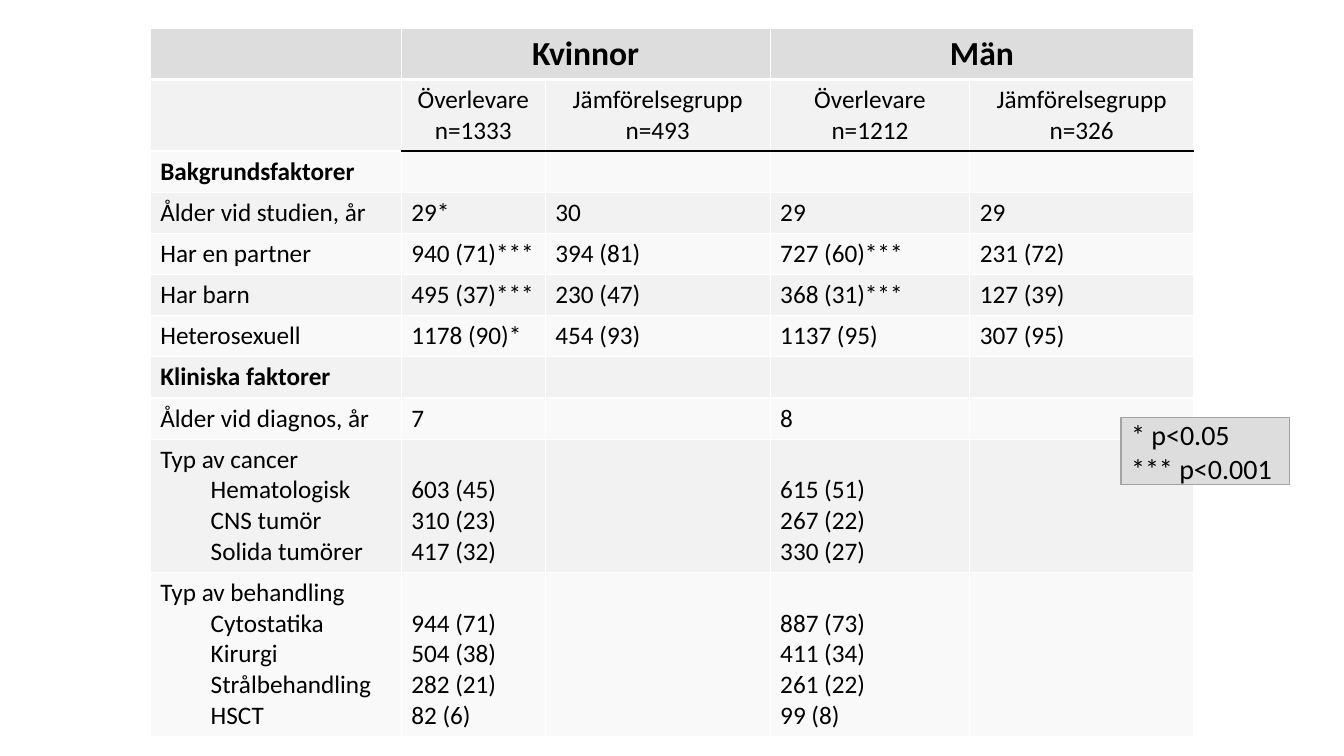
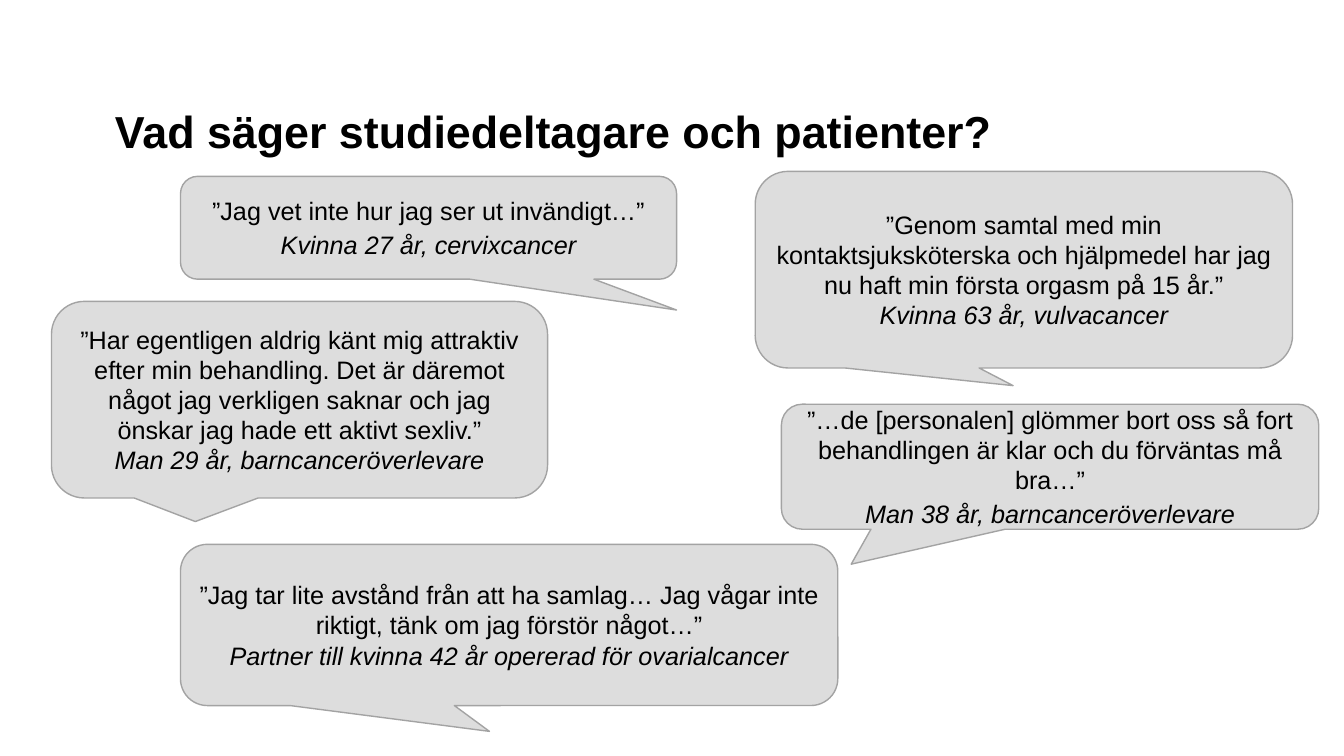
from lxml import etree
from pptx import Presentation
from pptx.dml.color import RGBColor
from pptx.enum.shapes import MSO_SHAPE
from pptx.enum.text import MSO_ANCHOR, MSO_AUTO_SIZE, PP_ALIGN
from pptx.oxml.ns import qn
from pptx.util import Inches, Pt

LEFT, CENTER = PP_ALIGN.LEFT, PP_ALIGN.CENTER
TOP, MIDDLE, BOTTOM = MSO_ANCHOR.TOP, MSO_ANCHOR.MIDDLE, MSO_ANCHOR.BOTTOM
RECTANGLE = MSO_SHAPE.RECTANGLE
CALLOUT = MSO_SHAPE.ROUNDED_RECTANGULAR_CALLOUT
FIXED_SIZE = MSO_AUTO_SIZE.NONE

SLIDE_WIDTH, SLIDE_HEIGHT = Inches(13.33), Inches(7.5)
SLIDE_BOX = (0, 0, SLIDE_WIDTH, SLIDE_HEIGHT)
TITLE_ONLY, BLANK = 5, 6
TABLE_FONT, SPEECH_FONT = "Calibri", "Arial"
COLORS = {
    "text": "000000",
    "panel": "DDDDDD",
    "outline": "A3A3A3",
    "band_dark": "F2F2F2",
    "band_light": "F9F9F9",
    "grid": "FFFFFF",
}

COLUMN_SHARES = (2.49, 1.43, 2.23, 1.98, 2.22)
ROW_SHARES = (0.51, 0.71) + (0.41,) * 7 + (1.32, 1.62)
SECTIONS = ("Bakgrundsfaktorer", "Kliniska faktorer")
ROWS = (
    ("", "Kvinnor", "", "Män", ""),
    ("", "Överlevare\nn=1333", "Jämförelsegrupp\nn=493",
     "Överlevare\nn=1212", "Jämförelsegrupp\nn=326"),
    ("Bakgrundsfaktorer", "", "", "", ""),
    ("Ålder vid studien, år", "29*", "30", "29", "29"),
    ("Har en partner", "940 (71)***", "394 (81)", "727 (60)***", "231 (72)"),
    ("Har barn", "495 (37)***", "230 (47)", "368 (31)***", "127 (39)"),
    ("Heterosexuell", "1178 (90)*", "454 (93)", "1137 (95)", "307 (95)"),
    ("Kliniska faktorer", "", "", "", ""),
    ("Ålder vid diagnos, år", "7", "", "8", ""),
    ("Typ av cancer\nHematologisk\nCNS tumör\nSolida tumörer",
     "603 (45)\n310 (23)\n417 (32)", "", "615 (51)\n267 (22)\n330 (27)", ""),
    ("Typ av behandling\nCytostatika\nKirurgi\nStrålbehandling\nHSCT",
     "944 (71)\n504 (38)\n282 (21)\n82 (6)", "",
     "887 (73)\n411 (34)\n261 (22)\n99 (8)", ""),
)

QUOTES = (
    ((13.43, 23.33, 36.91, 13.6), (0.5, 0.8), 21.2, 3,
     "”Jag vet inte hur jag ser ut invändigt…”",
     "Kvinna 27 år, cervixcancer"),
    ((56.19, 22.67, 39.98, 26), (-0.02, 0.59), 21.5, 0,
     "”Genom samtal med min kontaktsjuksköterska och hjälpmedel har jag "
     "nu haft min första orgasm på 15 år.”",
     "Kvinna 63 år, vulvacancer"),
    ((13.43, 72, 48.91, 21.33), (-0.03, 0.66), 21.5, 0,
     "”Jag tar lite avstånd från att ha samlag… Jag vågar inte riktigt, "
     "tänk om jag förstör något…”",
     "Partner till kvinna 42 år opererad för ovarialcancer"),
    ((58.14, 53.47, 39.98, 16.53), (-0.37, 0.78), 21.2, 3,
     "”…de [personalen] glömmer bort oss så fort behandlingen är klar "
     "och du förväntas må bra…”",
     "Man 38 år, barncanceröverlevare"),
    ((3.83, 39.87, 36.91, 26), (-0.21, 0.62), 21.5, 0,
     "”Har egentligen aldrig känt mig attraktiv efter min behandling. "
     "Det är däremot något jag verkligen saknar och jag önskar jag hade "
     "ett aktivt sexliv.”",
     "Man 29 år, barncanceröverlevare"),
)


def color(name):
    """Return the named palette colour."""
    return RGBColor.from_string(COLORS[name])


def part(box, shares):
    """Return the part of a box given in percent: left, top, width, height."""
    left, top, width, height = box
    x, y, across, down = (share / 100 for share in shares)
    return (int(left + x * width), int(top + y * height),
            int(across * width), int(down * height))


def format_paragraph(paragraph, font_name, size, align=LEFT, bold=False, italic=False):
    """Align a paragraph and format its runs."""
    paragraph.alignment = align
    for run in paragraph.runs:
        font = run.font
        font.name, font.size = font_name, Pt(size)
        font.bold, font.italic = bold, italic
        font.color.rgb = color("text")


def add_panel(slide, kind, box, text):
    """Add a grey outlined shape with text in its middle."""
    shape = slide.shapes.add_shape(kind, *box)
    shape.shadow.inherit = False
    shape.fill.solid()
    shape.fill.fore_color.rgb = color("panel")
    shape.line.color.rgb = color("outline")
    shape.line.width = Pt(1)
    frame = shape.text_frame
    frame.word_wrap = True
    frame.vertical_anchor = MIDDLE
    frame.text = text
    return shape


def set_borders(cell, edges):
    """Draw the left, right, top and bottom borders of a cell."""
    properties = cell._tc.get_or_add_tcPr()
    for index, (side, (name, points)) in enumerate(zip("LRTB", edges)):
        line = etree.Element(qn(f"a:ln{side}"), w=str(Pt(points)))
        fill = etree.SubElement(line, qn("a:solidFill"))
        etree.SubElement(fill, qn("a:srgbClr"), val=COLORS[name])
        properties.insert(index, line)


def cell_edges(row, column):
    """Return the border colours and widths for a table position."""
    thin, thick, rule = ("grid", 1), ("grid", 3), ("text", 1)
    below = {0: thick}
    if column > 0:
        below[1] = rule
    return thin, thin, below.get(row - 1, thin), below.get(row, thin)


def format_cell(cell, row, column, text):
    """Fill one table cell with its text, band and borders."""
    cell.text = text
    cell.vertical_anchor = BOTTOM if row > 8 and column > 0 else TOP
    cell.fill.solid()
    band = "band_dark" if row % 2 else "band_light"
    cell.fill.fore_color.rgb = color(band if row else "panel")
    set_borders(cell, cell_edges(row, column))
    for index, paragraph in enumerate(cell.text_frame.paragraphs):
        if column == 0 and index > 0:
            paragraph.level = 1
            indent = int(SLIDE_WIDTH * 0.0375)
            paragraph._p.get_or_add_pPr().set("marL", str(indent))
        format_paragraph(paragraph, TABLE_FONT, 18 if row else 24,
                         CENTER if row < 2 else LEFT,
                         bold=row == 0 or text in SECTIONS)


def add_factor_table(slide, box):
    """Add the table of background and clinical factors."""
    table = slide.shapes.add_table(len(ROWS), len(COLUMN_SHARES), *box).table
    table.first_row = table.horz_banding = False
    for column, share in zip(table.columns, COLUMN_SHARES):
        column.width = int(box[2] * share / sum(COLUMN_SHARES))
    for row, share in zip(table.rows, ROW_SHARES):
        row.height = int(box[3] * share / sum(ROW_SHARES))
    for row, texts in enumerate(ROWS):
        for column, text in enumerate(texts):
            format_cell(table.cell(row, column), row, column, text)
    for column in (1, 3):
        table.cell(0, column).merge(table.cell(0, column + 1))


def add_legend(slide, box):
    """Add the key to the significance marks."""
    legend = add_panel(slide, RECTANGLE, box, "* p<0.05\n*** p<0.001")
    for paragraph in legend.text_frame.paragraphs:
        format_paragraph(paragraph, TABLE_FONT, 20)


def add_title(slide, box, text):
    """Place and format the title placeholder."""
    title = slide.shapes.title
    title.left, title.top, title.width, title.height = box
    frame = title.text_frame
    frame.text = text
    frame.word_wrap = True
    frame.auto_size = FIXED_SIZE
    frame.vertical_anchor = TOP
    frame.margin_top = Inches(0.12)
    paragraph = frame.paragraphs[0]
    paragraph.line_spacing = Pt(38.4)
    format_paragraph(paragraph, SPEECH_FONT, 32, bold=True)


def add_quote(slide, box, tip, spacing, gap, quote, speaker):
    """Add a speech bubble with a quote and its speaker in italics."""
    bubble = add_panel(slide, CALLOUT, box, f"{quote}\n{speaker}")
    bubble.adjustments[0], bubble.adjustments[1] = tip
    words, source = bubble.text_frame.paragraphs
    format_paragraph(words, SPEECH_FONT, 18, CENTER)
    format_paragraph(source, SPEECH_FONT, 18, CENTER, italic=True)
    words.line_spacing = source.line_spacing = Pt(spacing)
    source.space_before = Pt(gap)


def add_table_slide(presentation, box):
    """Build the slide comparing survivors with the control group."""
    slide = presentation.slides.add_slide(presentation.slide_layouts[BLANK])
    add_factor_table(slide, part(box, (11.18, 3.73, 77.63, 93.4)))
    add_legend(slide, part(box, (83.42, 55.2, 12.53, 8.93)))


def add_quotes_slide(presentation, box):
    """Build the slide with quotes from participants and patients."""
    slide = presentation.slides.add_slide(presentation.slide_layouts[TITLE_ONLY])
    add_title(slide, part(box, (7.8, 12.13, 77.72, 10.4)),
              "Vad säger studiedeltagare och patienter?")
    for shares, *content in QUOTES:
        add_quote(slide, part(box, shares), *content)


def main():
    """Build and save the presentation."""
    presentation = Presentation()
    presentation.slide_width = SLIDE_WIDTH
    presentation.slide_height = SLIDE_HEIGHT
    add_table_slide(presentation, SLIDE_BOX)
    add_quotes_slide(presentation, SLIDE_BOX)
    presentation.save("out.pptx")


if __name__ == "__main__":
    main()
